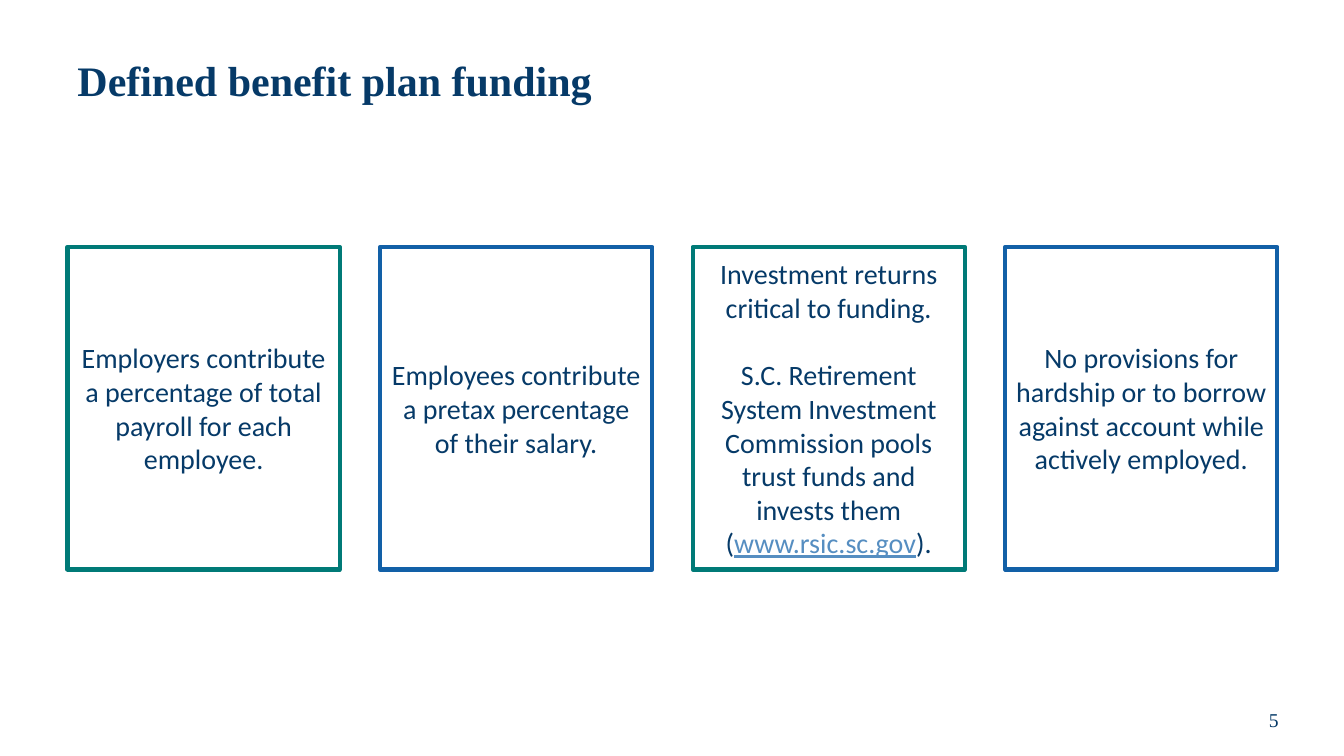
"""Build the slide on how the defined benefit plan is funded."""
from pptx import Presentation
from pptx import util as u
from pptx.dml import color
from pptx.enum import shapes, text

COLORS = {"navy": "063A68", "teal": "007A77", "blue": "1260A7", "link": "568EC1"}
BODY = {"name": "Calibri", "size": u.Pt(20), "bold": False}
TITLE = {"name": "Times New Roman", "size": u.Pt(30), "bold": True}
NUMBER = {"name": "Times New Roman", "size": u.Pt(14), "bold": False}

CARDS = [
    ("teal", [["Employers contribute a percentage of total payroll for each employee."]]),
    ("blue", [["Employees contribute a pretax percentage of their salary."]]),
    ("teal", [
        ["Investment returns critical to funding."],
        ["S.C. Retirement System Investment Commission pools trust funds and invests them (",
         "www.rsic.sc.gov", ")."],
    ]),
    ("blue", [["No provisions for hardship or to borrow against account while actively employed."]]),
]
CARD_LEFT, CARD_PITCH = 0.67, 3.1


def rgb(name):
    return color.RGBColor.from_string(COLORS[name])


def write(shape, paragraphs, font, align):
    frame = shape.text_frame
    frame.word_wrap = True
    frame.vertical_anchor = text.MSO_ANCHOR.MIDDLE
    for index, pieces in enumerate(paragraphs):
        paragraph = frame.add_paragraph() if index else frame.paragraphs[0]
        paragraph.alignment = align
        if index:
            paragraph.space_before = u.Pt(24)
        for piece in pieces:
            run = paragraph.add_run()
            run.text = piece
            for key, value in font.items():
                setattr(run.font, key, value)
            is_link = piece.startswith("www.")
            run.font.color.rgb = rgb("link" if is_link else "navy")
            run.font.underline = is_link
    return frame


presentation = Presentation()
presentation.slide_width = u.Inches(13.33)
presentation.slide_height = u.Inches(7.5)
slide = presentation.slides.add_slide(presentation.slide_layouts[6])

title = slide.shapes.add_textbox(u.Inches(0.67), u.Inches(0.25), u.Inches(12), u.Inches(1.15))
title_frame = write(title, [["Defined benefit plan funding"]], TITLE, text.PP_ALIGN.LEFT)
title_frame.paragraphs[0].line_spacing = 0.9

for column, (outline, paragraphs) in enumerate(CARDS):
    card = slide.shapes.add_shape(
        shapes.MSO_SHAPE.RECTANGLE, u.Inches(CARD_LEFT + column * CARD_PITCH),
        u.Inches(2.45), u.Inches(2.7), u.Inches(3.2))
    card.shadow.inherit = False
    card.fill.background()
    card.line.color.rgb = rgb(outline)
    card.line.width = u.Pt(3)
    card_frame = write(card, paragraphs, BODY, text.PP_ALIGN.CENTER)
    for side in ("left", "top", "right", "bottom"):
        setattr(card_frame, f"margin_{side}", u.Inches(0.1))

number = slide.shapes.add_textbox(u.Inches(12.05), u.Inches(6.89), u.Inches(1.17), u.Inches(0.5))
write(number, [["5"]], NUMBER, text.PP_ALIGN.CENTER)

presentation.save("out.pptx")
